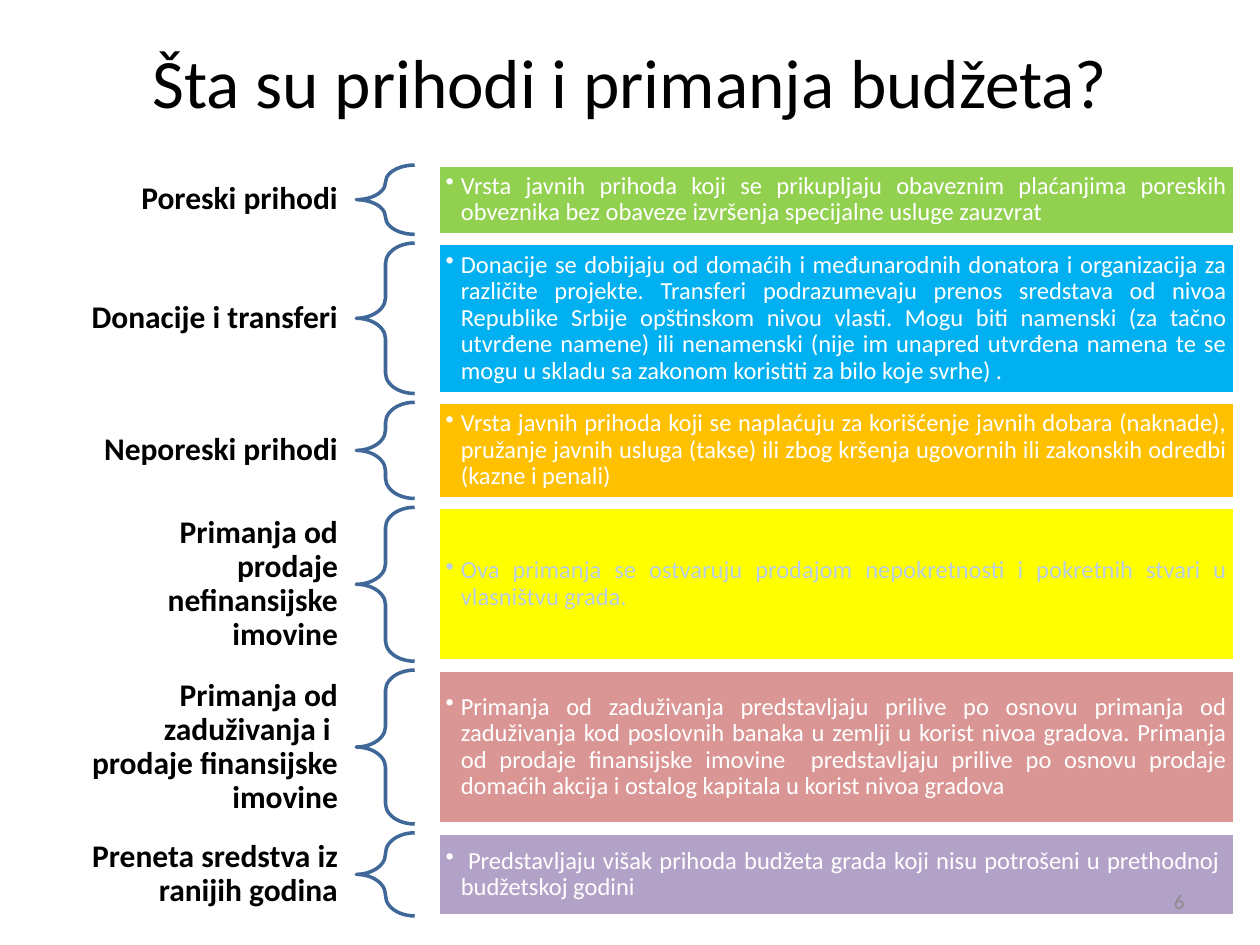
import pptx
import pptx.util
import pptx.dml.color
import pptx.enum.shapes
import pptx.enum.text
import pptx.oxml.ns
import lxml.etree

Pt = pptx.util.Pt
RGBColor = pptx.dml.color.RGBColor
ALIGN = pptx.enum.text.PP_ALIGN
MIDDLE = pptx.enum.text.MSO_ANCHOR.MIDDLE
SHAPE = pptx.enum.shapes.MSO_SHAPE

BLACK = RGBColor(0x00, 0x00, 0x00)
WHITE = RGBColor(0xFF, 0xFF, 0xFF)
GRAY = RGBColor(0x8C, 0x8C, 0x8C)
PALE_BLUE = RGBColor(0xB9, 0xCD, 0xE5)
BRACE_BLUE = RGBColor(0x3F, 0x67, 0x97)
GREEN = RGBColor(0x92, 0xD0, 0x50)
BLUE = RGBColor(0x00, 0xB0, 0xF0)
ORANGE = RGBColor(0xFF, 0xC0, 0x00)
YELLOW = RGBColor(0xFF, 0xFF, 0x00)
ROSE = RGBColor(0xD9, 0x96, 0x94)
PURPLE = RGBColor(0xB3, 0xA2, 0xC7)

FONT = "Calibri"
FIRST_TOP = 94.3
ROW_GAP = 5
LABEL_LEFT, LABEL_WIDTH = 36, 167.2
BRACE_LEFT, BRACE_WIDTH = 203.6, 33.4
BAR_LEFT, BAR_WIDTH = 250.5, 455
BULLET_INDENT = 8.64

REVENUES = [
    ("Poreski prihodi", 28, 39.6, GREEN, WHITE,
     "Vrsta javnih prihoda koji se prikupljaju obaveznim plaćanjima poreskih "
     "obveznika bez obaveze izvršenja specijalne usluge zauzvrat"),
    ("Donacije i transferi", 28, 86, BLUE, WHITE,
     "Donacije se dobijaju od domaćih i međunarodnih donatora i organizacija za "
     "različite projekte. Transferi podrazumevaju prenos sredstava od nivoa "
     "Republike Srbije opštinskom nivou vlasti. Mogu biti namenski (za tačno "
     "utvrđene namene) ili nenamenski (nije im unapred utvrđena namena te se "
     "mogu u skladu sa zakonom koristiti za bilo koje svrhe) ."),
    ("Neporeski prihodi", 28, 55, ORANGE, WHITE,
     "Vrsta javnih prihoda koji se naplaćuju za korišćenje javnih dobara "
     "(naknade), pružanje javnih usluga (takse) ili zbog kršenja ugovornih ili "
     "zakonskih odredbi (kazne i penali)"),
    ("Primanja od prodaje nefinansijske imovine", 88, 88, YELLOW, PALE_BLUE,
     "Ova primanja se ostvaruju prodajom nepokretnosti i pokretnih stvari u "
     "vlasništvu grada."),
    ("Primanja od zaduživanja i  prodaje finansijske imovine", 88, 88, ROSE, WHITE,
     "Primanja od zaduživanja predstavljaju prilive po osnovu primanja od "
     "zaduživanja kod poslovnih banaka u zemlji u korist nivoa gradova. Primanja "
     "od prodaje finansijske imovine  predstavljaju prilive po osnovu prodaje "
     "domaćih akcija i ostalog kapitala u korist nivoa gradova"),
    ("Preneta sredstva iz ranijih godina", 47.5, 47.5, PURPLE, WHITE,
     " Predstavljaju višak prihoda budžeta grada koji nisu potrošeni u "
     "prethodnoj  budžetskoj godini"),
]


def write_text(shape, text, size, color, align, bold=False, line_spacing=None,
               inset_x=7.2, inset_y=3.6):
    frame = shape.text_frame
    frame.word_wrap = True
    frame.auto_size = pptx.enum.text.MSO_AUTO_SIZE.NONE
    frame.vertical_anchor = MIDDLE
    frame.margin_left = frame.margin_right = Pt(inset_x)
    frame.margin_top = frame.margin_bottom = Pt(inset_y)
    paragraph = frame.paragraphs[0]
    paragraph.alignment = align
    paragraph.line_spacing = line_spacing
    run = paragraph.add_run()
    run.text = text
    run.font.name = FONT
    run.font.size = Pt(size)
    run.font.bold = bold
    run.font.color.rgb = color
    return paragraph


def add_bullet(paragraph):
    properties = paragraph._p.get_or_add_pPr()
    properties.set("marL", str(Pt(BULLET_INDENT)))
    properties.set("indent", str(-Pt(BULLET_INDENT)))
    bullet = lxml.etree.SubElement(properties, pptx.oxml.ns.qn("a:buChar"))
    bullet.set("char", "•")


def add_title(slide, text):
    title = slide.shapes.title
    title.left, title.top = Pt(36), Pt(21.6)
    title.width, title.height = Pt(648), Pt(49)
    write_text(title, text, size=39.6, color=BLACK, align=ALIGN.CENTER)


def add_label(slide, text, top, height):
    label = slide.shapes.add_textbox(
        Pt(LABEL_LEFT), Pt(top), Pt(LABEL_WIDTH), Pt(height))
    write_text(label, text, size=18, color=BLACK, align=ALIGN.RIGHT, bold=True,
               line_spacing=0.9, inset_x=10)


def add_brace(slide, top, height):
    brace = slide.shapes.add_shape(
        SHAPE.LEFT_BRACE, Pt(BRACE_LEFT), Pt(top), Pt(BRACE_WIDTH), Pt(height))
    brace.shadow.inherit = False
    brace.adjustments[0] = 0.35
    brace.adjustments[1] = 0.5
    brace.fill.background()
    brace.line.color.rgb = BRACE_BLUE
    brace.line.width = Pt(2)


def add_bar(slide, text, top, height, fill, color):
    bar = slide.shapes.add_shape(
        SHAPE.RECTANGLE, Pt(BAR_LEFT), Pt(top), Pt(BAR_WIDTH), Pt(height))
    bar.shadow.inherit = False
    bar.fill.solid()
    bar.fill.fore_color.rgb = fill
    bar.line.color.rgb = WHITE
    bar.line.width = Pt(2)
    paragraph = write_text(bar, text, size=14, color=color, align=ALIGN.JUSTIFY,
                           line_spacing=0.9, inset_x=4.2, inset_y=4.2)
    add_bullet(paragraph)


def add_page_number(slide, number):
    page_number = slide.shapes.add_textbox(Pt(516), Pt(500.5), Pt(168), Pt(28.8))
    write_text(page_number, number, size=12, color=GRAY, align=ALIGN.RIGHT)


def main():
    deck = pptx.Presentation()
    deck.slide_width, deck.slide_height = Pt(720), Pt(540)
    slide = deck.slides.add_slide(deck.slide_layouts[5])
    add_title(slide, "Šta su prihodi i primanja budžeta?")
    top = FIRST_TOP
    for label, label_height, height, fill, color, description in REVENUES:
        add_label(slide, label, top + (height - label_height) / 2, label_height)
        add_brace(slide, top, height)
        add_bar(slide, description, top, height, fill, color)
        top += height + ROW_GAP
    add_page_number(slide, "6")
    deck.save("out.pptx")


if __name__ == "__main__":
    main()
